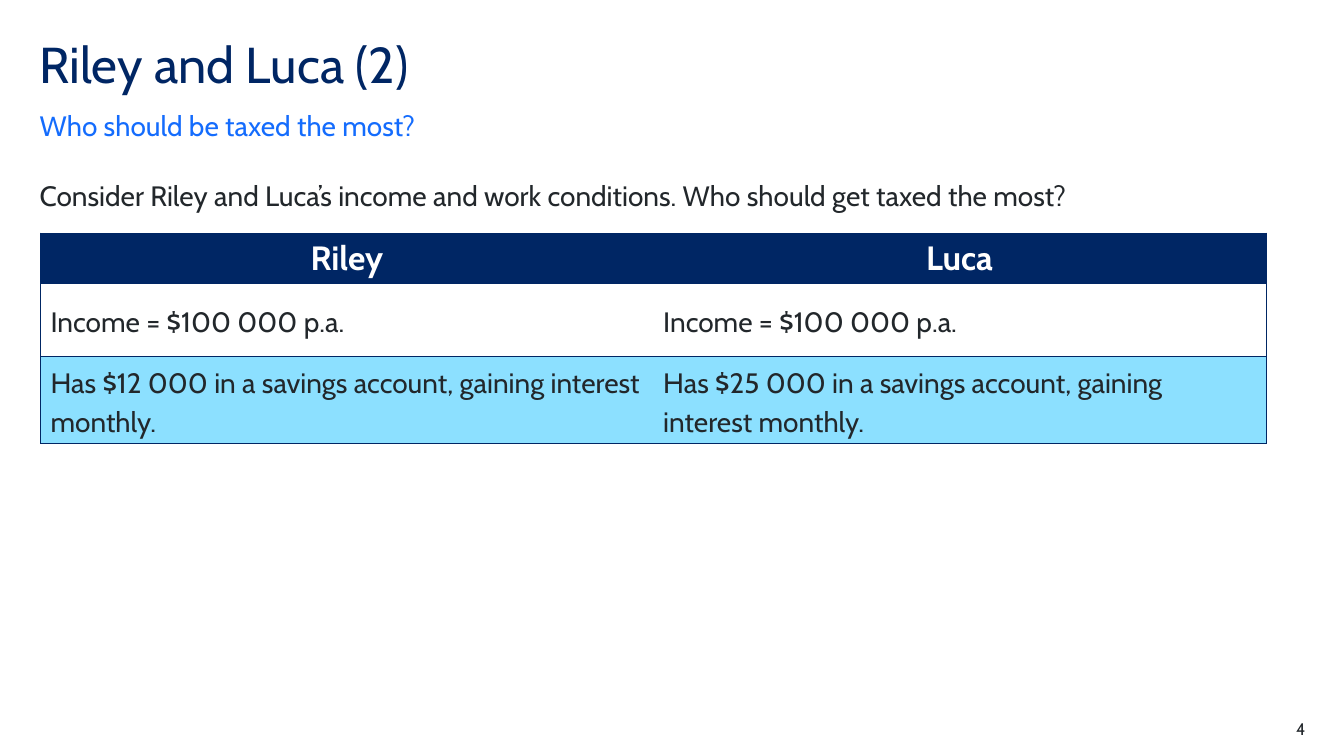
from lxml import etree
from pptx import Presentation
from pptx.dml.color import RGBColor
from pptx.enum.text import MSO_ANCHOR, PP_ALIGN
from pptx.oxml.ns import qn
from pptx.util import Cm, Pt

LEFT, CENTER, RIGHT = PP_ALIGN.LEFT, PP_ALIGN.CENTER, PP_ALIGN.RIGHT
TOP, MIDDLE, BOTTOM = MSO_ANCHOR.TOP, MSO_ANCHOR.MIDDLE, MSO_ANCHOR.BOTTOM
FONT = "Cabin"
COLORS = {
    "navy": "002664",
    "blue": "146CFD",
    "sky": "8CE0FF",
    "ink": "22272B",
    "white": "FFFFFF",
}
ROWS = [
    ("Riley", "Luca"),
    ("Income = $100 000 p.a.", "Income = $100 000 p.a."),
    (
        "Has $12 000 in a savings account, gaining interest monthly.",
        "Has $25 000 in a savings account, gaining interest monthly.",
    ),
]
ROW_HEIGHTS = [1.17, 1.85, 1.85]
ROW_FILLS = ["navy", None, "sky"]


def rgb(name):
    return RGBColor.from_string(COLORS[name])


def write(para, text, size, color, bold=False, align=LEFT):
    para.alignment = align
    span = para.add_run()
    span.text = text
    span.font.name = FONT
    span.font.size = Pt(size)
    span.font.bold = bold
    span.font.color.rgb = rgb(color)


def add_text(page, area, text, size, color, align=LEFT, anchor=TOP, spacing=1.0):
    box = page.shapes.add_textbox(*(Cm(value) for value in area))
    frame = box.text_frame
    frame.word_wrap = True
    frame.vertical_anchor = anchor
    frame.margin_left = frame.margin_right = 0
    frame.margin_top = frame.margin_bottom = 0
    para = frame.paragraphs[0]
    para.line_spacing = spacing
    write(para, text, size, color, align=align)


def set_borders(cell, visible):
    properties = cell._tc.get_or_add_tcPr()
    for side in "LRTB":
        line = etree.SubElement(properties, qn(f"a:ln{side}"), w=str(Pt(0.5)))
        if side in visible:
            fill = etree.SubElement(line, qn("a:solidFill"))
            etree.SubElement(fill, qn("a:srgbClr"), val=COLORS["navy"])
        else:
            etree.SubElement(line, qn("a:noFill"))


def add_heading(page, left, top, width):
    add_text(page, (left, top, width, 1.52), "Riley and Luca (2)", 36, "navy", spacing=0.9)
    add_text(page, (left, top + 1.72, width, 0.86), "Who should be taxed the most?",
             20, "blue", anchor=BOTTOM)


def add_comparison(page, left, top, width):
    height = sum(ROW_HEIGHTS)
    frame = page.shapes.add_table(len(ROWS), 2, Cm(left), Cm(top), Cm(width), Cm(height))
    table = frame.table
    table.horz_banding = False
    for row_index, texts in enumerate(ROWS):
        table.rows[row_index].height = Cm(ROW_HEIGHTS[row_index])
        header = row_index == 0
        for column_index, text in enumerate(texts):
            cell = table.cell(row_index, column_index)
            side = "LR"[column_index]
            set_borders(cell, side + ("T" if header else "TB"))
            fill = ROW_FILLS[row_index]
            if fill:
                cell.fill.solid()
                cell.fill.fore_color.rgb = rgb(fill)
            else:
                cell.fill.background()
            para = cell.text_frame.paragraphs[0]
            if header:
                write(para, text, 24, "white", bold=True, align=CENTER)
            else:
                cell.vertical_anchor = MIDDLE
                para.line_spacing = 1.14
                para.space_after = Pt(6)
                write(para, text, 20, "ink")


def add_body(page, left, top, width):
    question = ("Consider Riley and Luca’s income and work conditions. "
                "Who should get taxed the most?")
    add_text(page, (left, top, width, 1.0), question, 20, "ink")
    add_comparison(page, left + 0.02, top + 1.37, 30.88)


def add_page_number(page, left, top, width):
    add_text(page, (left, top, width, 0.5), "4", 12, "ink", align=RIGHT)


def main():
    deck = Presentation()
    deck.slide_width = Cm(33.87)
    deck.slide_height = Cm(19.05)
    page = deck.slides.add_slide(deck.slide_layouts[6])
    add_heading(page, 1, 1, 28)
    add_body(page, 1, 4.5, 31.9)
    add_page_number(page, 30.9, 18.11, 2)
    deck.save("out.pptx")


if __name__ == "__main__":
    main()
